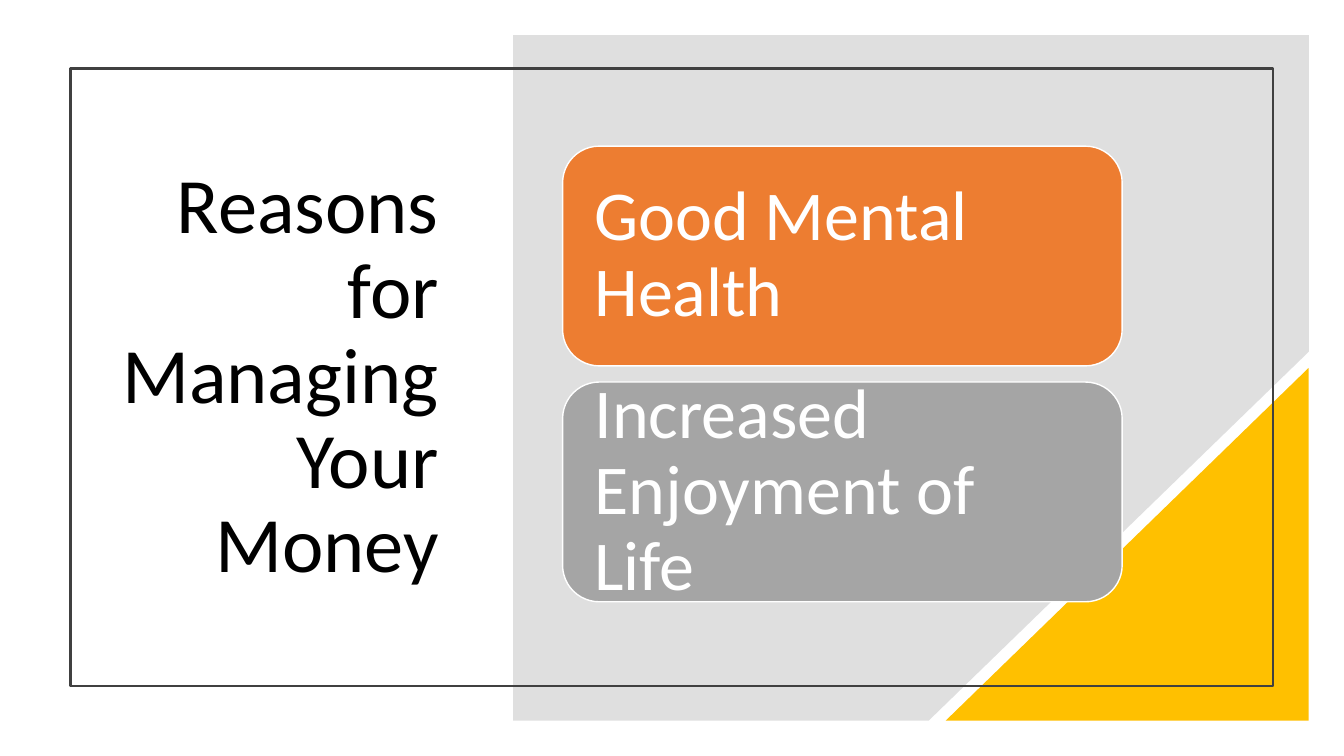
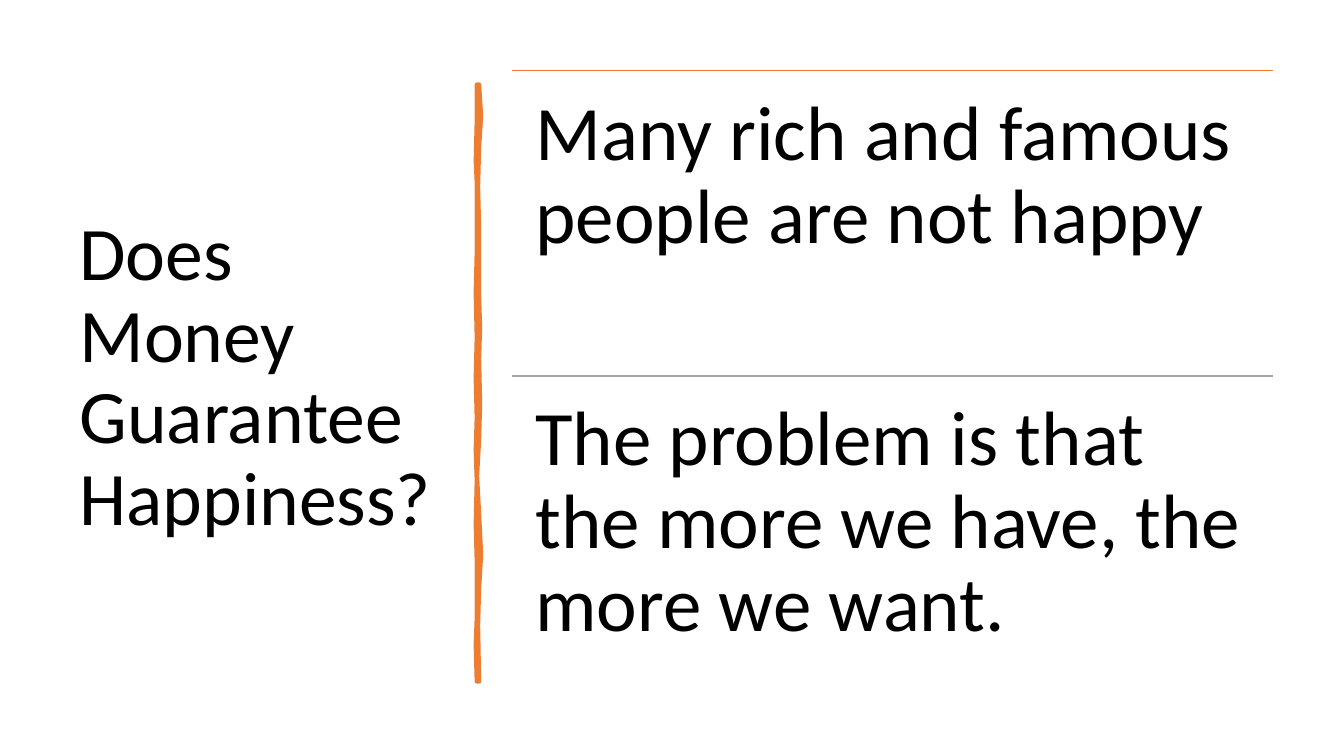
from typing import NamedTuple

from lxml import etree
from pptx import Presentation
from pptx.dml.color import RGBColor
from pptx.enum import shapes, text
from pptx.oxml.ns import qn
from pptx.util import Inches, Pt

FONT = "Calibri"
BLACK = RGBColor(0x00, 0x00, 0x00)
WHITE = RGBColor(0xFF, 0xFF, 0xFF)
CHARCOAL = RGBColor(0x40, 0x40, 0x40)
PANEL_GRAY = RGBColor(0x80, 0x80, 0x80)
GOLD = RGBColor(0xFF, 0xC0, 0x00)
ORANGE = RGBColor(0xED, 0x7D, 0x31)
GRAY = RGBColor(0xA5, 0xA5, 0xA5)


class Box(NamedTuple):
    left: float
    top: float
    width: float
    height: float

    def emu(self) -> list[int]:
        return [Inches(v) for v in self]


class Item(NamedTuple):
    words: str
    color: RGBColor


REASONS = [
    Item("Good Mental Health", ORANGE),
    Item("Increased Enjoyment of Life", GRAY),
]
ANSWERS = [
    Item("Many rich and famous people are not happy", ORANGE),
    Item("The problem is that the more we have, the more we want.", GRAY),
]

PANEL_OUTLINE = [(5.09, 0.35), (12.98, 0.35), (12.98, 3.49), (9.21, 7.15), (5.09, 7.15)]
STROKE_RIGHT = [
    (4.75, 0.84), (4.77, 1.15), (4.75, 1.46), (4.74, 1.85), (4.75, 2.26), (4.75, 2.94),
    (4.76, 3.25), (4.75, 3.56), (4.76, 4), (4.75, 4.36), (4.73, 4.72), (4.75, 5.1),
    (4.77, 5.5), (4.75, 5.84), (4.74, 6.2), (4.75, 6.76),
]
STROKE_LEFT = [
    (4.73, 6.76), (4.72, 6.4), (4.73, 6.13), (4.73, 5.57), (4.72, 5.2), (4.73, 4.77),
    (4.72, 4.46), (4.73, 4.15), (4.72, 3.75), (4.73, 3.35), (4.72, 2.9), (4.73, 2.5),
    (4.73, 1.81), (4.72, 1.6), (4.73, 1.2), (4.73, 0.84),
]


def style(sp, fill: RGBColor | None = None, line: RGBColor | None = None, weight: float = 1):
    """Set fill and line, either of which may be none, and drop the shadow."""
    sp.shadow.inherit = False
    if fill is None:
        sp.fill.background()
    else:
        sp.fill.solid()
        sp.fill.fore_color.rgb = fill
    if line is None:
        sp.line.fill.background()
    else:
        sp.line.color.rgb = line
        sp.line.width = Pt(weight)
    return sp


def add_preset(s, kind, box: Box, **look):
    return style(s.shapes.add_shape(kind, *box.emu()), **look)


def add_outline(s, points: list[tuple[float, float]], **look):
    (x, y), *rest = points
    builder = s.shapes.build_freeform(Inches(x), Inches(y))
    builder.add_line_segments([(Inches(a), Inches(b)) for a, b in rest], close=True)
    return style(builder.convert_to_shape(), **look)


def set_alpha(sp, percent: int) -> None:
    color = sp.fill._xPr.find(qn("a:solidFill"))[0]
    etree.SubElement(color, qn("a:alpha")).set("val", str(percent * 1000))


def write(sp, words: str, *, size: float, color: RGBColor = BLACK,
          align=text.PP_ALIGN.LEFT, anchor=text.MSO_ANCHOR.MIDDLE,
          inset: float | None = None) -> None:
    tf = sp.text_frame
    tf.word_wrap = True
    tf.vertical_anchor = anchor
    if inset is not None:
        tf.margin_left = tf.margin_right = tf.margin_top = tf.margin_bottom = Inches(inset)
    p = tf.paragraphs[0]
    p.alignment = align
    p.line_spacing = 0.9
    r = p.add_run()
    r.text = words
    r.font.name = FONT
    r.font.size = Pt(size)
    r.font.color.rgb = color


def add_text(s, box: Box, words: str, **fmt) -> None:
    write(s.shapes.add_textbox(*box.emu()), words, **fmt)


def add_rule(s, left: float, top: float, width: float, color: RGBColor) -> None:
    line = s.shapes.add_connector(shapes.MSO_CONNECTOR.STRAIGHT, Inches(left), Inches(top),
                                  Inches(left + width), Inches(top))
    line.line.color.rgb = color
    line.line.width = Pt(1)
    etree.SubElement(line._element.spPr, qn("a:effectLst"))


def build_reasons(s) -> None:
    kinds = shapes.MSO_SHAPE
    add_text(s, Box(1.1, 1.3, 3.35, 4.9), "Reasons for Managing Your Money",
             size=56, align=text.PP_ALIGN.RIGHT)
    set_alpha(add_outline(s, PANEL_OUTLINE, fill=PANEL_GRAY), 25)
    corner = add_preset(s, kinds.RIGHT_TRIANGLE, Box(9.38, 3.65, 3.6, 3.5), fill=GOLD)
    corner._element.spPr.find(qn("a:xfrm")).set("flipH", "1")
    add_preset(s, kinds.RECTANGLE, Box(0.7, 0.68, 11.93, 6.13), line=CHARCOAL, weight=1.5)

    height, gap = 2.18, 0.16
    for i, item in enumerate(REASONS):
        card = add_preset(s, kinds.ROUNDED_RECTANGLE,
                          Box(5.58, 1.45 + i * (height + gap), 5.55, height),
                          fill=item.color, line=WHITE)
        write(card, item.words, size=50, color=WHITE, inset=0.21)


def build_happiness(s) -> None:
    add_text(s, Box(0.69, 0.7, 3.74, 6.11), "Does Money Guarantee Happiness?", size=54)
    add_outline(s, STROKE_RIGHT + STROKE_LEFT, fill=ORANGE, line=ORANGE, weight=3.25)

    left, width, height = 5.08, 7.55, 3.03
    for i, item in enumerate(ANSWERS):
        top = 0.7 + i * height
        add_rule(s, left, top, width, item.color)
        add_text(s, Box(left, top, width, height), item.words, size=55,
                 anchor=text.MSO_ANCHOR.TOP, inset=0.23)


def main() -> None:
    prs = Presentation()
    prs.slide_width, prs.slide_height = Inches(13.33), Inches(7.5)
    for build in (build_reasons, build_happiness):
        build(prs.slides.add_slide(prs.slide_layouts[6]))
    prs.save("out.pptx")


if __name__ == "__main__":
    main()
